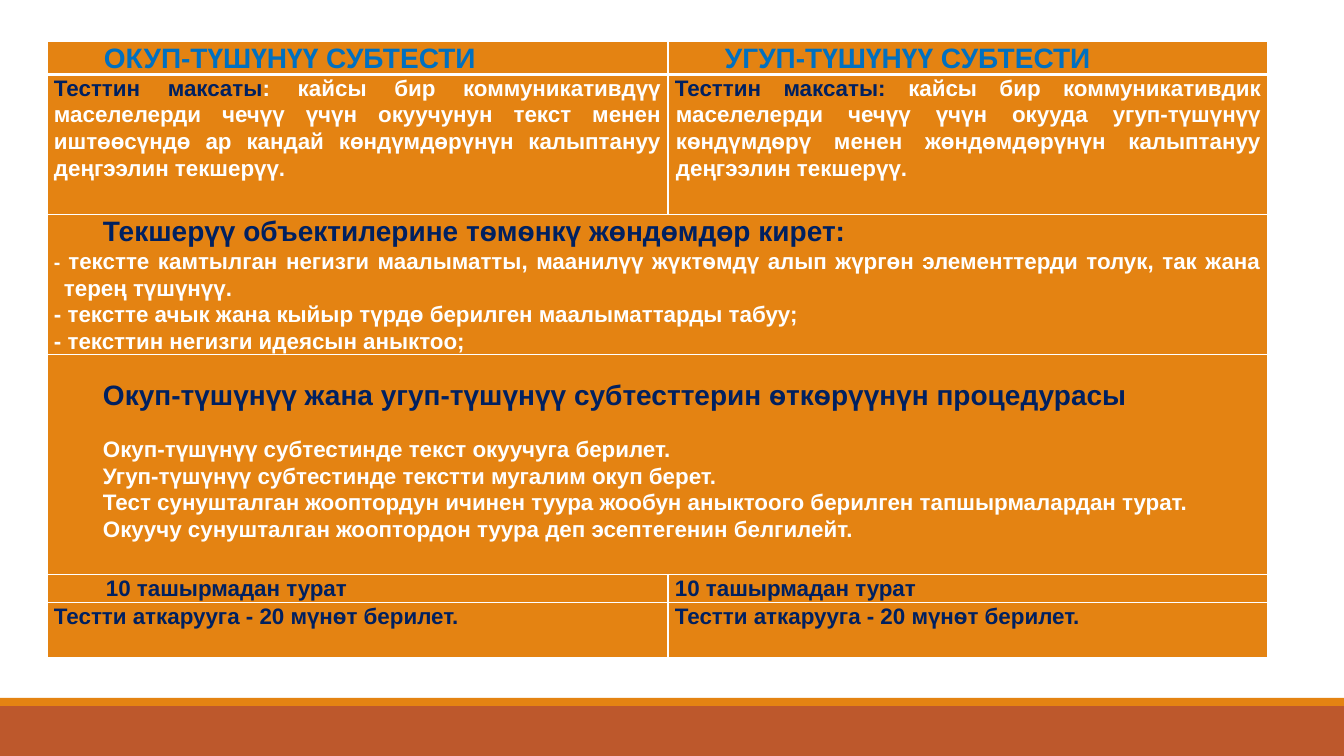
from lxml.etree import SubElement
from pptx import Presentation
from pptx.dml.color import RGBColor
from pptx.enum.shapes import MSO_SHAPE
from pptx.enum.text import PP_ALIGN
from pptx.oxml.ns import qn
from pptx.util import Emu, Pt


def px(length):
    """Turn pixels, 100.8 to the inch, into EMU."""
    return Emu(round(length * 914400 / 100.8))


def paint(fill, color):
    fill.solid()
    fill.fore_color.rgb = RGBColor.from_string(color)


ORANGE, RUST, WHITE = "E48312", "BD582C", "FFFFFF"
BLUE, NAVY = "0070C0", "002060"
JUSTIFY, LEFT = PP_ALIGN.JUSTIFY, PP_ALIGN.LEFT
SLIDE_WIDTH, SLIDE_HEIGHT = 1344, 756
COLUMN_WIDTHS = [621, 600]
ROW_HEIGHTS = [33, 140, 140, 220, 28, 55]
BLANK_LINE = 24

# Cell: (row, column) -> paragraphs of (alignment, left, first line, runs);
# run: (text, size, color)
duration = [(LEFT, 0, 0, [("Тестти аткарууга - 20 мүнѳт берилет.", 16, NAVY)])]
cells = {
    (0, 0): [(JUSTIFY, 50, 0, [("ОКУП-ТҮШҮНҮҮ СУБТЕСТИ", 20, BLUE)])],
    (0, 1): [(JUSTIFY, 50, 0, [("УГУП-ТҮШҮНҮҮ СУБТЕСТИ", 20, BLUE)])],
    (1, 0): [(JUSTIFY, 0, 0, [
        ("Тесттин максаты", 16, NAVY),
        (": кайсы бир коммуникативдүү маселелерди чечүү үчүн окуучунун текст менен "
         "иштөөсүндө ар кандай көндүмдөрүнүн калыптануу деңгээлин текшерүү.", 16, WHITE)])],
    (1, 1): [(JUSTIFY, 1, -1, [
        ("Тесттин максаты: ", 16, NAVY),
        ("кайсы бир коммуникативдик маселелерди чечүү үчүн окууда угуп-түшүнүү "
         "кѳндүмдѳрү менен жөндөмдөрүнүн калыптануу деңгээлин текшерүү.", 16, WHITE)])],
    (2, 0): [
        (JUSTIFY, 0, 49, [("Текшерүү объектилерине тѳмѳнкү жөндөмдөр кирет:", 20, NAVY)]),
        (JUSTIFY, 10, -10, [
            ("- ", 14, WHITE),
            ("текстте камтылган негизги маалыматты, маанилүү жүктѳмдү алып жүргөн "
             "элементтерди толук, так жана терең түшүнүү.", 16, WHITE)]),
        (JUSTIFY, 0, 0, [
            ("- текстте ачык жана кыйыр түрдө берилген маалыматтарды табуу;", 16, WHITE)]),
        (JUSTIFY, 0, 0, [("- тексттин негизги идеясын аныктоо;", 16, WHITE)])],
    (3, 0): [
        (JUSTIFY, 0, 49, [
            ("Окуп-түшүнүү жана угуп-түшүнүү субтесттерин ѳткѳрүүнүн процедурасы", 20, NAVY)]),
        *[(JUSTIFY, 0, 49, [(step, 16, WHITE)]) for step in (
            "Окуп-түшүнүү субтестинде текст окуучуга берилет.",
            "Угуп-түшүнүү субтестинде текстти мугалим окуп берет.",
            "Тест сунушталган жооптордун ичинен туура жообун аныктоого берилген "
            "тапшырмалардан турат.",
            "Окуучу сунушталган жооптордон туура деп эсептегенин белгилейт.")]],
    (4, 0): [(JUSTIFY, 0, 52, [("10 ташырмадан турат", 16, NAVY)])],
    (4, 1): [(JUSTIFY, 0, 0, [("10 ташырмадан турат", 16, NAVY)])],
    (5, 0): duration,
    (5, 1): duration,
}

presentation = Presentation()
presentation.slide_width = px(SLIDE_WIDTH)
presentation.slide_height = px(SLIDE_HEIGHT)
slide = presentation.slides.add_slide(presentation.slide_layouts[6])

# Bands along the bottom edge
for top, height, color in [(706, 50, RUST), (698, 8, ORANGE)]:
    band = slide.shapes.add_shape(
        MSO_SHAPE.RECTANGLE, 0, px(top), px(SLIDE_WIDTH), px(height))
    band.shadow.inherit = False
    band.line.fill.background()
    paint(band.fill, color)

# Table of the two subtests
table = slide.shapes.add_table(
    len(ROW_HEIGHTS), len(COLUMN_WIDTHS), px(47), px(41),
    px(sum(COLUMN_WIDTHS)), px(sum(ROW_HEIGHTS))).table
table.horz_banding = False
for column, width in zip(table.columns, COLUMN_WIDTHS):
    column.width = px(width)
for row, height in zip(table.rows, ROW_HEIGHTS):
    row.height = px(height)
for row_index in (2, 3):
    table.cell(row_index, 0).merge(table.cell(row_index, 1))

for row_index in range(len(ROW_HEIGHTS)):
    for column_index in range(len(COLUMN_WIDTHS)):
        cell = table.cell(row_index, column_index)
        cell.margin_left = cell.margin_right = px(7)
        cell.margin_top = px(BLANK_LINE if row_index == 3 else 0)
        cell.margin_bottom = 0
        thick_side = {0: "a:lnB", 1: "a:lnT"}.get(row_index)
        for side in ("a:lnL", "a:lnR", "a:lnT", "a:lnB"):
            line_width = Pt(3 if side == thick_side else 1)
            border = SubElement(cell._tc.get_or_add_tcPr(), qn(side), w=str(line_width))
            border_fill = SubElement(border, qn("a:solidFill"))
            SubElement(border_fill, qn("a:srgbClr"), val=WHITE)
        paint(cell.fill, ORANGE)

for (row_index, column_index), paragraphs in cells.items():
    text_frame = table.cell(row_index, column_index).text_frame
    for index, (alignment, left, first_line, runs) in enumerate(paragraphs):
        paragraph = text_frame.add_paragraph() if index else text_frame.paragraphs[0]
        paragraph.alignment = alignment
        paragraph.line_spacing = 1.07
        if row_index == 3 and index == 1:
            paragraph.space_before = px(BLANK_LINE)
        properties = paragraph._p.get_or_add_pPr()
        properties.set("marL", str(px(left)))
        properties.set("indent", str(px(first_line)))
        for text, size, color in runs:
            run = paragraph.add_run()
            run.text = text
            run.font.name = "Arial"
            run.font.size = Pt(size)
            run.font.bold = True
            run.font.color.rgb = RGBColor.from_string(color)

presentation.save("out.pptx")
